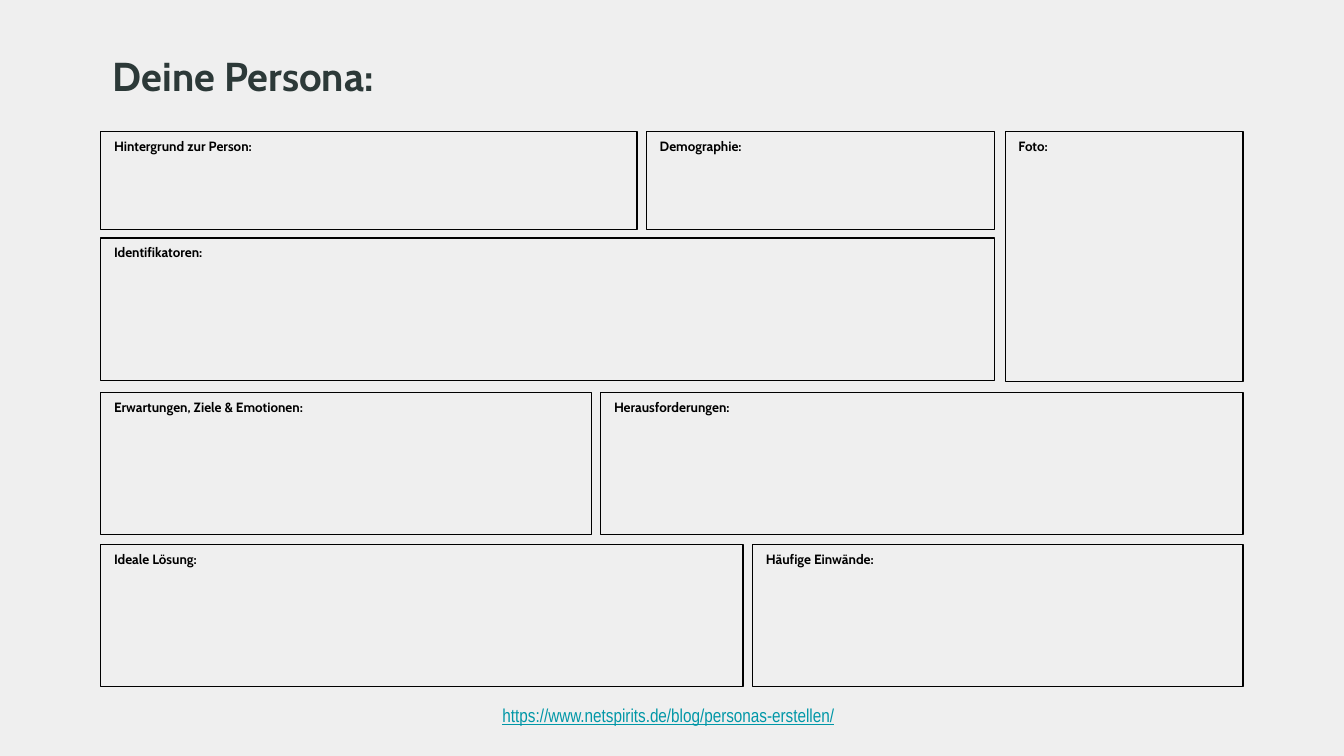
from pptx import Presentation, util as u
from pptx.dml.color import RGBColor
from pptx.enum import shapes, text

COLORS = {"background": "EFEFEF", "title": "2C3938", "ink": "000000", "link": "0097A7"}
LEFT, GAP = 0.75, 0.07

# Each row: top, height, then (label, width) for its fields
ROWS = [
    (0.98, 0.73, [("Hintergrund zur Person:", 3.99), ("Demographie:", 2.59)]),
    (1.77, 1.06, [("Identifikatoren:", 6.65)]),
    (2.92, 1.06, [("Erwartungen, Ziele & Emotionen:", 3.65), ("Herausforderungen:", 4.78)]),
    (4.05, 1.06, [("Ideale Lösung:", 4.78), ("Häufige Einwände:", 3.65)]),
]


def color(name):
    return RGBColor.from_string(COLORS[name])


def write(tf, content, *, size, ink="ink", font="Cabin", bold=False,
          underline=False, wrap=True, margins=(0.1, 0.05)):
    tf.word_wrap = wrap
    tf.vertical_anchor = text.MSO_ANCHOR.TOP
    tf.margin_left = tf.margin_right = u.Inches(margins[0])
    tf.margin_top = tf.margin_bottom = u.Inches(margins[1])
    p = tf.paragraphs[0]
    p.alignment = text.PP_ALIGN.LEFT
    r = p.add_run()
    r.text = content
    r.font.name = font
    r.font.size = u.Pt(size)
    r.font.bold = bold
    r.font.underline = underline
    r.font.color.rgb = color(ink)


class Canvas:
    """Holds the style and the current slide."""

    label_size = 7.2
    line_width = 0.75

    def __init__(self, prs):
        self.s = prs.slides.add_slide(prs.slide_layouts[6])
        self.s.background.fill.solid()
        self.s.background.fill.fore_color.rgb = color("background")

    def text(self, content, x, y, w, h, **style):
        sp = self.s.shapes.add_textbox(*map(u.Inches, (x, y, w, h)))
        write(sp.text_frame, content, **style)

    def field(self, label, x, y, w, h):
        sp = self.s.shapes.add_shape(
            shapes.MSO_SHAPE.RECTANGLE, *map(u.Inches, (x, y, w, h)))
        sp.shadow.inherit = False
        sp.fill.background()
        sp.line.color.rgb = color("ink")
        sp.line.width = u.Pt(self.line_width)
        write(sp.text_frame, label, size=self.label_size, bold=True)


def main():
    # Widescreen slide, 16:9
    prs = Presentation()
    prs.slide_width = u.Inches(10)
    prs.slide_height = u.Inches(10 * 9 / 16)
    canvas = Canvas(prs)

    # Title
    canvas.text("Deine Persona:", 0.75, 0.34, 7.69, 0.42, size=21.6,
                ink="title", bold=True, margins=(0.09, 0.04))

    # Photo field beside the first two rows
    canvas.field("Foto:", 7.48, 0.98, 1.77, 1.86)

    # Rows of persona fields
    for top, height, fields in ROWS:
        x = LEFT
        for label, width in fields:
            canvas.field(label, x, top, width, height)
            x += width + GAP

    # Source address
    canvas.text("https://www.netspirits.de/blog/personas-erstellen/",
                3.64, 5.19, 2.72, 0.27, size=10, ink="link",
                font="Arial Narrow", underline=True, wrap=False)

    prs.save("out.pptx")


if __name__ == "__main__":
    main()
